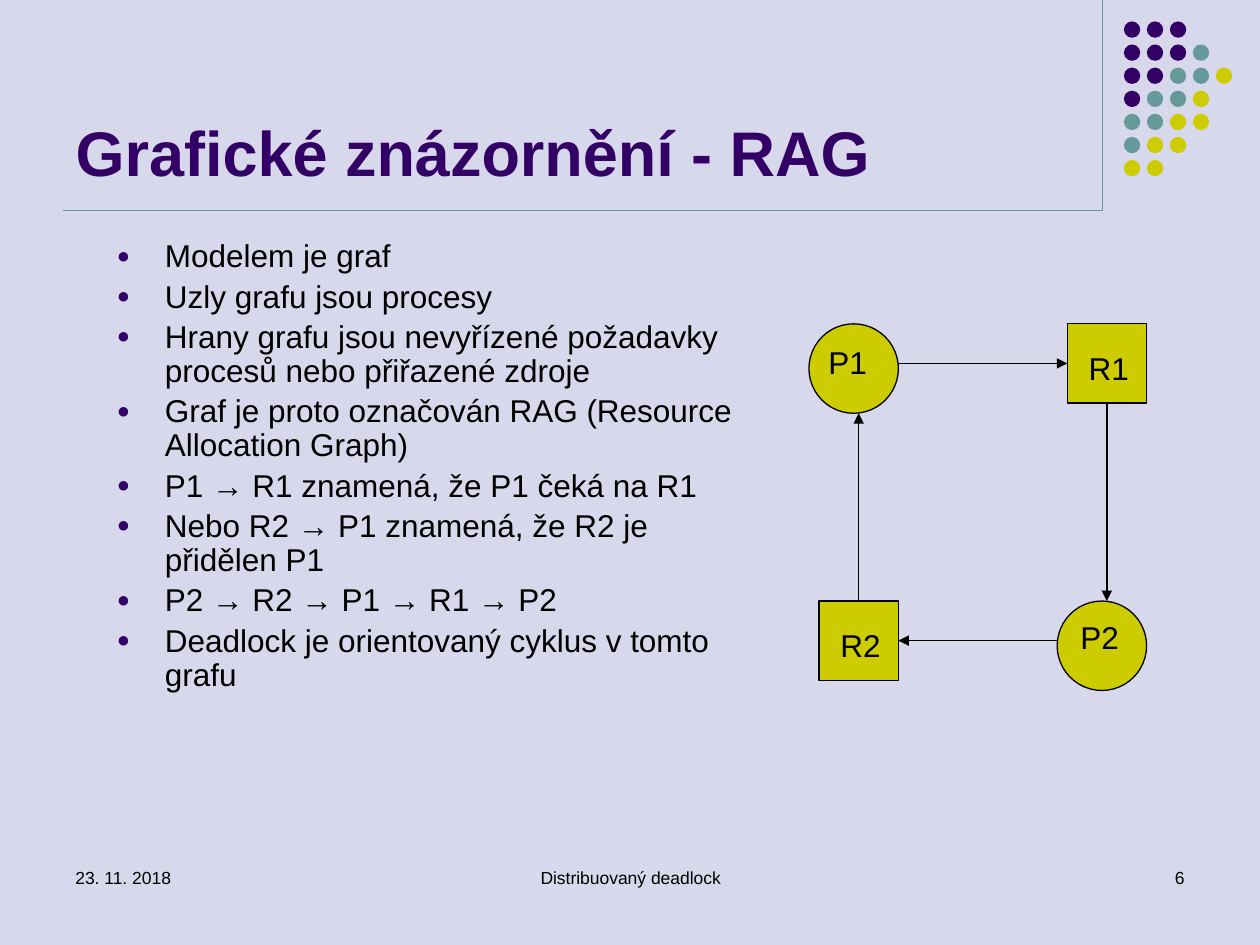
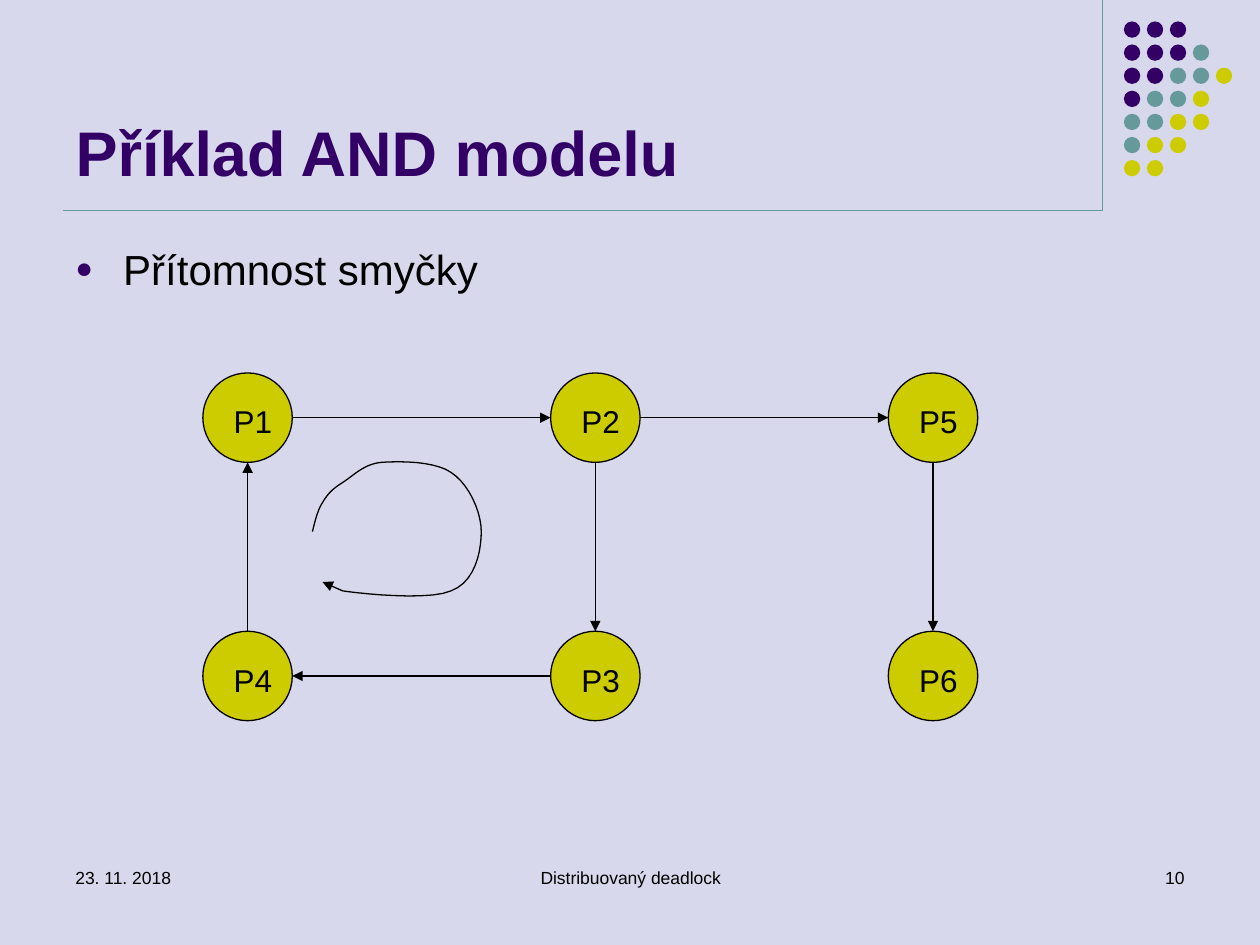
from lxml import etree
from pptx import Presentation
from pptx.dml.color import RGBColor
from pptx.enum import shapes, text
from pptx.oxml.ns import qn
from pptx.util import Inches, Pt

FONT = "Arial"
PURPLE, TEAL, LIME, BLACK, LAVENDER = "330066", "669999", "CCCC00", "000000", "D8D8EC"
DOT_COLOURS = {"P": PURPLE, "T": TEAL, "L": LIME}
DOT_ROWS = ["PPP", "PPPT", "PPTTL", "PTTL", "TTLL", "TLL", "LL"]
DATE, FOOTER = "23. 11. 2018", "Distribuovaný deadlock"
CIRCLE, SQUARE = shapes.MSO_SHAPE.OVAL, shapes.MSO_SHAPE.RECTANGLE
SIZES = {CIRCLE: 0.71, SQUARE: 0.63}
COLS, ROWS = (1.61, 4.37, 7.05), (2.96, 5.01)
GRID = [["P1", "P2", "P5"], ["P4", "P3", "P6"]]

SLIDES = [
    {
        "title": "Grafické znázornění - RAG",
        "number": "6",
        "body": (0.83, 1.86, 5.28, 4.82),
        "size": 18,
        "line_spacing": 0.9,
        "bullets": [
            "Modelem je graf",
            "Uzly grafu jsou procesy",
            "Hrany grafu jsou nevyřízené požadavky procesů nebo přiřazené zdroje",
            "Graf je proto označován RAG (Resource Allocation Graph)",
            "P1 → R1 znamená, že P1 čeká na R1",
            "Nebo R2 → P1 znamená, že R2 je přidělen P1",
            "P2 → R2 → P1 → R1 → P2",
            "Deadlock je orientovaný cyklus v tomto grafu",
        ],
        "nodes": [
            ("P1", CIRCLE, 6.42, 2.57, (0.05, 0.05)),
            ("P2", CIRCLE, 8.39, 4.77, (0.08, 0.03)),
            ("R1", SQUARE, 8.47, 2.57, (0.17, 0.2)),
            ("R2", SQUARE, 6.5, 4.77, (0.17, 0.2)),
        ],
        "edges": [("P1", "R1"), ("R1", "P2"), ("P2", "R2"), ("R2", "P1")],
    },
    {
        "title": "Příklad AND modelu",
        "number": "10",
        "body": (0.5, 1.88, 3.63, 0.69),
        "size": 24,
        "line_spacing": 1.0,
        "bullets": ["Přítomnost smyčky"],
        "nodes": [
            (name, CIRCLE, x, y, (0.14, 0.13))
            for y, names in zip(ROWS, GRID)
            for x, name in zip(COLS, names)
        ],
        "edges": [("P1", "P2"), ("P2", "P3"), ("P3", "P4"),
                  ("P4", "P1"), ("P5", "P6"), ("P2", "P5")],
        "loop": {
            "start": (2.48, 4.22),
            "curves": [
                ((2.5, 4.14), (2.52, 4.05), (2.56, 3.99)),
                ((2.6, 3.92), (2.64, 3.88), (2.72, 3.83)),
                ((2.8, 3.78), (2.89, 3.68), (3.03, 3.67)),
                ((3.18, 3.66), (3.45, 3.66), (3.58, 3.75)),
                ((3.72, 3.84), (3.82, 4.06), (3.82, 4.22)),
                ((3.82, 4.38), (3.77, 4.62), (3.58, 4.69)),
                ((3.4, 4.77), (2.85, 4.71), (2.72, 4.69)),
            ],
            "tip": (2.56, 4.62),
        },
    },
]


def rgb(value):
    return RGBColor.from_string(value)


def box(*lengths):
    return [Inches(v) for v in lengths]


def style(p, size, colour=BLACK, bold=False):
    for r in p.runs:
        r.font.name, r.font.size, r.font.bold = FONT, Pt(size), bold
        r.font.color.rgb = rgb(colour)


def set_line(sp, colour):
    sp.line.color.rgb = rgb(colour)
    sp.line.width = Pt(0.75)


def add_head(sp):
    etree.SubElement(sp.line._get_or_add_ln(), qn("a:tailEnd"), type="triangle")


def add_line(s, x1, y1, x2, y2, colour):
    line = s.shapes.add_connector(shapes.MSO_CONNECTOR.STRAIGHT, *box(x1, y1, x2, y2))
    set_line(line, colour)
    etree.SubElement(line._element.spPr, qn("a:effectLst"))
    return line


def add_filled(s, kind, x, y, size, colour):
    sp = s.shapes.add_shape(kind, *box(x, y, size, size))
    sp.shadow.inherit = False
    sp.fill.solid()
    sp.fill.fore_color.rgb = rgb(colour)
    sp.line.fill.background()
    return sp


def add_bullet(p):
    pPr = p._p.get_or_add_pPr()
    pPr.set("marL", str(Inches(0.38)))
    pPr.set("indent", str(-Inches(0.38)))
    colour = etree.SubElement(pPr, qn("a:buClr"))
    etree.SubElement(colour, qn("a:srgbClr"), val=PURPLE)
    etree.SubElement(pPr, qn("a:buSzPct"), val="70000")
    etree.SubElement(pPr, qn("a:buFont"), typeface=FONT)
    etree.SubElement(pPr, qn("a:buChar"), char="●")


def add_frame(s, number):
    add_line(s, 8.75, 0, 8.75, 1.67, TEAL)
    add_line(s, 0.5, 1.67, 8.75, 1.67, TEAL)
    for row, dots in enumerate(DOT_ROWS):
        for col, dot in enumerate(dots):
            x, y = 8.92 + col * 0.73 / 4, 0.17 + row * 1.1 / 6
            add_filled(s, CIRCLE, x, y, 0.13, DOT_COLOURS[dot])
    align = text.PP_ALIGN
    for label, x, width, side in [(DATE, 0.5, 2.33, align.LEFT),
                                  (FOOTER, 3.42, 3.17, align.CENTER),
                                  (number, 7.17, 2.33, align.RIGHT)]:
        tf = s.shapes.add_textbox(*box(x, 6.83, width, 0.5)).text_frame
        tf.word_wrap = True
        tf.text = label
        tf.paragraphs[0].alignment = side
        style(tf.paragraphs[0], 10)


def add_title(s, label):
    sp = s.shapes.title
    sp.left, sp.top, sp.width, sp.height = box(0.5, 0.13, 8.25, 1.42)
    tf = sp.text_frame
    tf.text = label
    tf.auto_size = text.MSO_AUTO_SIZE.NONE
    tf.vertical_anchor = text.MSO_ANCHOR.BOTTOM
    tf.paragraphs[0].alignment = text.PP_ALIGN.LEFT
    style(tf.paragraphs[0], 36, PURPLE, True)


def add_body(s, place, bullets, size, line_spacing):
    tf = s.shapes.add_textbox(*box(*place)).text_frame
    tf.word_wrap = True
    tf.text = "\n".join(bullets)
    for p in tf.paragraphs:
        p.line_spacing = line_spacing
        p.space_before = Pt(size * 0.2)
        add_bullet(p)
        style(p, size)


def add_node(s, name, kind, x, y, inset):
    sp = add_filled(s, kind, x, y, SIZES[kind], LIME)
    set_line(sp, BLACK)
    tf = sp.text_frame
    tf.margin_left, tf.margin_top = box(*inset)
    tf.margin_right = tf.margin_bottom = 0
    tf.vertical_anchor = text.MSO_ANCHOR.TOP
    tf.text = name
    tf.paragraphs[0].alignment = text.PP_ALIGN.LEFT
    style(tf.paragraphs[0], 18)
    return sp


def add_edge(s, start, end):
    is_square = [sp.auto_shape_type == SQUARE for sp in (start, end)]
    guide = end if is_square[1] else start
    dx, dy = end.left - start.left, end.top - start.top
    if abs(dx) > abs(dy):
        y1 = y2 = guide.top + guide.height // 2
        x1, x2 = ((start.left + start.width, end.left) if dx > 0
                  else (start.left, end.left + end.width))
        sites = (3, 1) if dx > 0 else (1, 3)
    else:
        x1 = x2 = guide.left + guide.width // 2
        y1, y2 = ((start.top + start.height, end.top) if dy > 0
                  else (start.top, end.top + end.height))
        sites = (2, 0) if dy > 0 else (0, 2)
    line = add_line(s, *(v / Inches(1) for v in (x1, y1, x2, y2)), BLACK)
    add_head(line)
    if is_square[0]:
        line.begin_connect(start, sites[0])
    if is_square[1]:
        line.end_connect(end, sites[1])


def bezier(a, b, c, d, t):
    u = 1 - t
    return [u**3 * i + 3 * u * u * t * j + 3 * u * t * t * k + t**3 * m
            for i, j, k, m in zip(a, b, c, d)]


def add_loop(s, start, curves, tip):
    steps, points, pen = 10, [], start
    for curve in curves:
        points += [bezier(pen, *curve, i / steps) for i in range(1, steps + 1)]
        pen = curve[-1]
    builder = s.shapes.build_freeform(*box(*start))
    builder.add_line_segments([box(*pt) for pt in points + [tip]], close=False)
    sp = builder.convert_to_shape()
    sp.shadow.inherit = False
    sp.fill.background()
    set_line(sp, BLACK)
    add_head(sp)


def main():
    prs = Presentation()
    prs.slide_width, prs.slide_height = box(10, 7.5)
    fill = prs.slide_master.background.fill
    fill.solid()
    fill.fore_color.rgb = rgb(LAVENDER)
    for spec_ in SLIDES:
        s = prs.slides.add_slide(prs.slide_layouts[5])
        add_frame(s, spec_["number"])
        add_title(s, spec_["title"])
        add_body(s, spec_["body"], spec_["bullets"], spec_["size"], spec_["line_spacing"])
        nodes = {node[0]: add_node(s, *node) for node in spec_["nodes"]}
        for start, end in spec_["edges"]:
            add_edge(s, nodes[start], nodes[end])
        if "loop" in spec_:
            add_loop(s, **spec_["loop"])
    prs.save("out.pptx")


if __name__ == "__main__":
    main()
